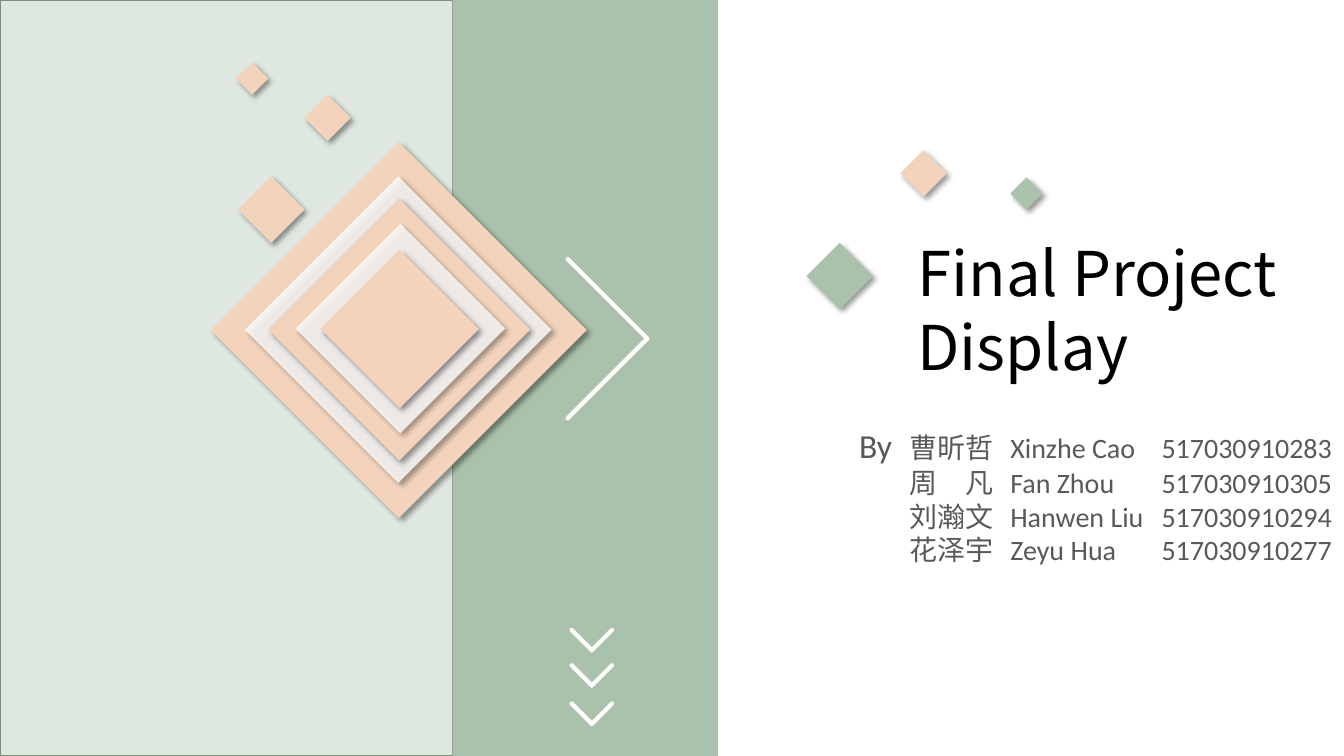
from lxml import etree
from pptx import Presentation
from pptx.dml.color import RGBColor
from pptx.enum import shapes, text
from pptx.oxml import ns
from pptx.util import Inches, Pt

GREEN, PEACH, WHITE = "AAC2AC", "F3D3BC", "FFFFFF"


def paint(fmt, color):
    """Give a fill, or the fill of a line, a solid colour."""
    fmt.solid()
    fmt.fore_color.rgb = RGBColor.from_string(color)


def sub(node, tag, **attrs):
    return etree.SubElement(node, ns.qn(tag), attrs)


class Deck:
    head, body = "Noto Sans CJK SC", "Calibri"

    def __init__(self):
        self.prs = Presentation()
        self.prs.slide_width, self.prs.slide_height = Inches(13.33), Inches(7.5)
        self.slide = self.prs.slides.add_slide(self.prs.slide_layouts[1])

    def shape(self, kind, box, color, alpha=None, edge=None):
        item = self.slide.shapes.add_shape(kind, *map(Inches, box))
        item.shadow.inherit = False
        paint(item.fill, color)
        if alpha:
            tone = item.fill._xPr.find(".//" + ns.qn("a:srgbClr"))
            sub(tone, "a:alpha", val=str(alpha * 1000))
        if edge:
            paint(item.line.fill, edge)
            item.line.width = Pt(1)
        else:
            item.line.fill.background()
        return item

    def panel(self, left, width, color, **style):
        self.shape(shapes.MSO_SHAPE.RECTANGLE, (left, 0, width, 7.5), color, **style)

    def diamond(self, left, top, size, color, alpha=None):
        item = self.shape(shapes.MSO_SHAPE.DIAMOND, (left, top, size, size), color, alpha)
        effect = item._element.spPr.find(ns.qn("a:effectLst"))
        shade = sub(effect, "a:outerShdw", blurRad=str(Pt(4)), dist=str(Pt(3)),
                    dir="2700000", algn="tl", rotWithShape="0")
        sub(sub(shade, "a:srgbClr", val="000000"), "a:alpha", val="40000")

    def chevron(self, *points):
        for start, end in zip(points, points[1:]):
            line = self.slide.shapes.add_connector(
                shapes.MSO_CONNECTOR.STRAIGHT, *map(Inches, start + end))
            paint(line.line.fill, WHITE)
            line.line.width = Pt(3)
            line.line._ln.set("cap", "rnd")
            sub(line._element.spPr, "a:effectLst")

    def place(self, item, box):
        item.left, item.top, item.width, item.height = map(Inches, box)
        frame = item.text_frame
        frame.word_wrap = True
        frame.auto_size = text.MSO_AUTO_SIZE.NONE
        frame.vertical_anchor = text.MSO_ANCHOR.TOP
        return frame

    def style(self, para, name, size, color):
        para.alignment = text.PP_ALIGN.LEFT
        para.line_spacing, para.space_before = 1.0, Pt(0)
        para.font.name, para.font.size = name, Pt(size)
        paint(para.font.fill, color)

    def title(self, words, box):
        para = self.place(self.slide.shapes.title, box).paragraphs[0]
        para.text = words
        self.style(para, self.head, 44, "000000")

    def names(self, rows, box, stops):
        frame = self.place(self.slide.placeholders[1], box)
        for i, row in enumerate(rows):
            para = frame.add_paragraph() if i else frame.paragraphs[0]
            lead = para.add_run()
            lead.text = row[0] + "\t"
            if row[0]:
                lead.font.size = Pt(24)
            para.add_run().text = "\t".join(row[1:])
            self.style(para, self.body, 20, "595959")
            # No bullet, no indent, columns on tab stops
            props = para._p.pPr
            props.set("marL", "0")
            props.set("indent", "0")
            last = props.find(ns.qn("a:defRPr"))
            last.addprevious(etree.Element(ns.qn("a:buNone")))
            tabs = etree.Element(ns.qn("a:tabLst"))
            last.addprevious(tabs)
            for stop in stops:
                sub(tabs, "a:tab", pos=str(Inches(stop)), algn="l")


def main():
    deck = Deck()

    # Background panels
    deck.panel(0, 4.49, GREEN, alpha=37, edge="7E907F")
    deck.panel(4.49, 2.63, GREEN)

    # Nested diamonds, from outside in
    for left, top, size, color, alpha in [
            (2.09, 1.41, 3.73, PEACH, None), (2.43, 1.75, 3.04, WHITE, 81),
            (2.66, 1.97, 2.6, PEACH, None), (2.93, 2.22, 2.08, WHITE, 81),
            (3.18, 2.48, 1.57, PEACH, None)]:
        deck.diamond(left, top, size, color, alpha)

    # Loose diamonds on the panel and around the title
    for left, top, size, color in [
            (2.36, 1.75, 0.66, PEACH), (3.02, 0.94, 0.46, PEACH),
            (2.34, 0.62, 0.32, PEACH), (8, 2.41, 0.66, GREEN),
            (8.93, 1.49, 0.46, PEACH), (10.02, 1.76, 0.32, GREEN)]:
        deck.diamond(left, top, size, color)

    # Chevrons: one to the right, three down
    deck.chevron((5.63, 4.15), (6.42, 3.36), (5.63, 2.57))
    for top in (6.25, 6.6, 6.98):
        deck.chevron((6.07, top), (5.87, top + 0.2), (5.67, top))

    # Title and authors
    deck.title("Final Project Display", (9, 2.28, 4.33, 1.58))
    deck.names([
        ("By", "曹昕哲", "Xinzhe Cao", "517030910283"),
        ("", "周　凡", "Fan Zhou", "517030910305"),
        ("", "刘瀚文", "Hanwen Liu", "517030910294"),
        ("", "花泽宇", "Zeyu Hua", "517030910277"),
    ], (8.42, 4.17, 4.91, 1.51), (0.45, 1.47, 2.86))

    deck.prs.save("out.pptx")


if __name__ == "__main__":
    main()
